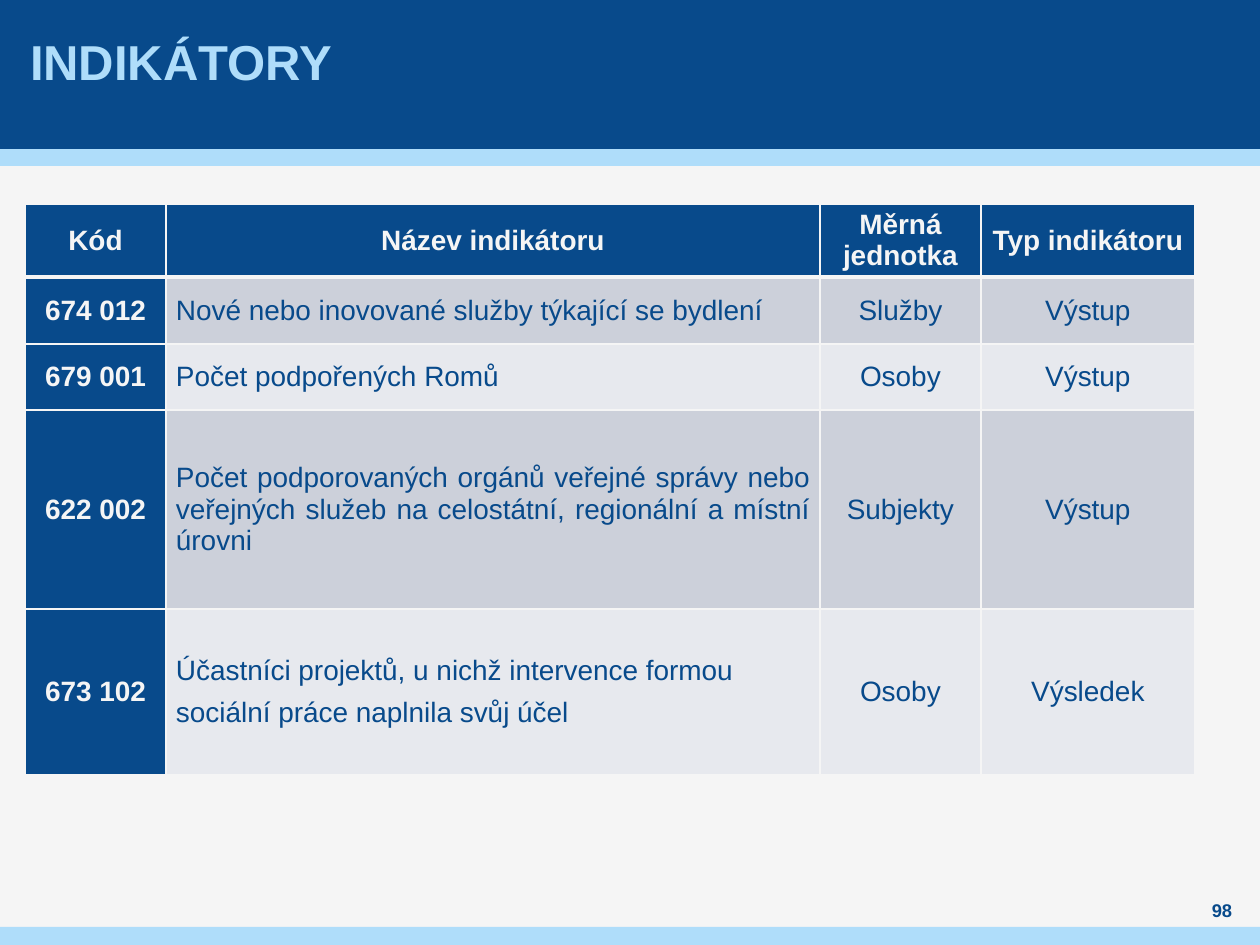
from pptx import Presentation
from pptx.dml.color import RGBColor
from pptx.enum.shapes import MSO_SHAPE as Kind
from pptx.enum.text import MSO_ANCHOR as Anchor, PP_ALIGN as Align
from pptx.util import Pt
from lxml.etree import SubElement
from pptx.oxml.ns import qn

NAVY = RGBColor(0x08, 0x4A, 0x8B)
SKY = RGBColor(0xAF, 0xDD, 0xFA)
PALE = RGBColor(0xF5, 0xF5, 0xF5)
BANDS = [RGBColor(0xCC, 0xD0, 0xDA), RGBColor(0xE7, 0xE9, 0xEE)]

TITLE = "INDIKÁTORY"
PAGE = "98"
ROWS = [
    ("Kód", "Název indikátoru", "Měrná jednotka", "Typ indikátoru"),
    ("674 012", "Nové nebo inovované služby týkající se bydlení", "Služby", "Výstup"),
    ("679 001", "Počet podpořených Romů", "Osoby", "Výstup"),
    ("622 002", "Počet podporovaných orgánů veřejné správy nebo veřejných služeb "
     "na celostátní, regionální a místní úrovni", "Subjekty", "Výstup"),
    ("673 102", "Účastníci projektů, u nichž intervence formou \n"
     "sociální práce naplnila svůj účel", "Osoby", "Výsledek"),
]
WIDTHS = [141, 654, 161, 214]
HEIGHTS = [73, 67, 66, 199, 166]
BARS = [(149, 17, SKY), (0, 149, NAVY), (927, 18, SKY)]  # top, height, fill


def px(n):
    return round(n * 914400 / 126)


def style(para, size, color, bold, align):
    para.alignment = align
    for run in para.runs:
        font = run.font
        font.name, font.size, font.bold = "Arial", Pt(size), bold
        font.color.rgb = color


def pad(box, side):
    box.margin_left = box.margin_right = px(side)
    box.margin_top = box.margin_bottom = 0
    box.vertical_anchor = Anchor.MIDDLE


def edge(cell, tag, width):
    line = SubElement(cell._tc.get_or_add_tcPr(), qn("a:" + tag), w=str(Pt(width)))
    fill = SubElement(line, qn("a:solidFill"))
    SubElement(fill, qn("a:srgbClr"), val=str(PALE))


prs = Presentation()
prs.slide_width, prs.slide_height = px(1260), px(945)
slide = prs.slides.add_slide(prs.slide_layouts[5])
slide.background.fill.solid()
slide.background.fill.fore_color.rgb = PALE

# Title, moved in front of the bars
title = slide.shapes.title
for top, high, color in BARS:
    bar = slide.shapes.add_shape(Kind.RECTANGLE, 0, px(top), px(1260), px(high))
    bar.shadow.inherit = False
    bar.fill.solid()
    bar.fill.fore_color.rgb = color
    bar.line.fill.background()
    title._element.addprevious(bar._element)
title.left, title.top, title.width, title.height = px(25), px(-14), px(1160), px(149)
title.text_frame.text = TITLE
pad(title.text_frame, 5)
style(title.text_frame.paragraphs[0], 28, SKY, True, Align.LEFT)

# Page number
num = slide.shapes.add_textbox(px(1190), px(898), px(64), px(25)).text_frame
num.word_wrap = True
num.text = PAGE
pad(num, 0)
style(num.paragraphs[0], 10.5, NAVY, True, Align.CENTER)

# Table: navy header row and code column, banded body
table = slide.shapes.add_table(len(ROWS), len(WIDTHS), px(25), px(204),
                               px(sum(WIDTHS)), px(sum(HEIGHTS))).table
for col, wide in zip(table.columns, WIDTHS):
    col.width = px(wide)
for r, (texts, high) in enumerate(zip(ROWS, HEIGHTS)):
    table.rows[r].height = px(high)
    for c, text in enumerate(texts):
        cell = table.cell(r, c)
        head = r == 0 or c == 0
        cell.text = text
        pad(cell, 5)
        for para in cell.text_frame.paragraphs:
            para.space_before = para.space_after = Pt(3)
            align = Align.JUSTIFY if c == 1 and r else Align.CENTER
            style(para, 16, PALE if head else NAVY, head, align)
            props = para._p.get_or_add_pPr()
            props.set("marL", str(px(5)))
            props.set("marR", str(px(5)))
        for tag in ("lnL", "lnR", "lnT", "lnB"):
            thick = (r, tag) in [(0, "lnB"), (1, "lnT")]
            edge(cell, tag, 3 if thick else 1)
        cell.fill.solid()
        cell.fill.fore_color.rgb = NAVY if head else BANDS[(r - 1) % 2]

prs.save("out.pptx")
